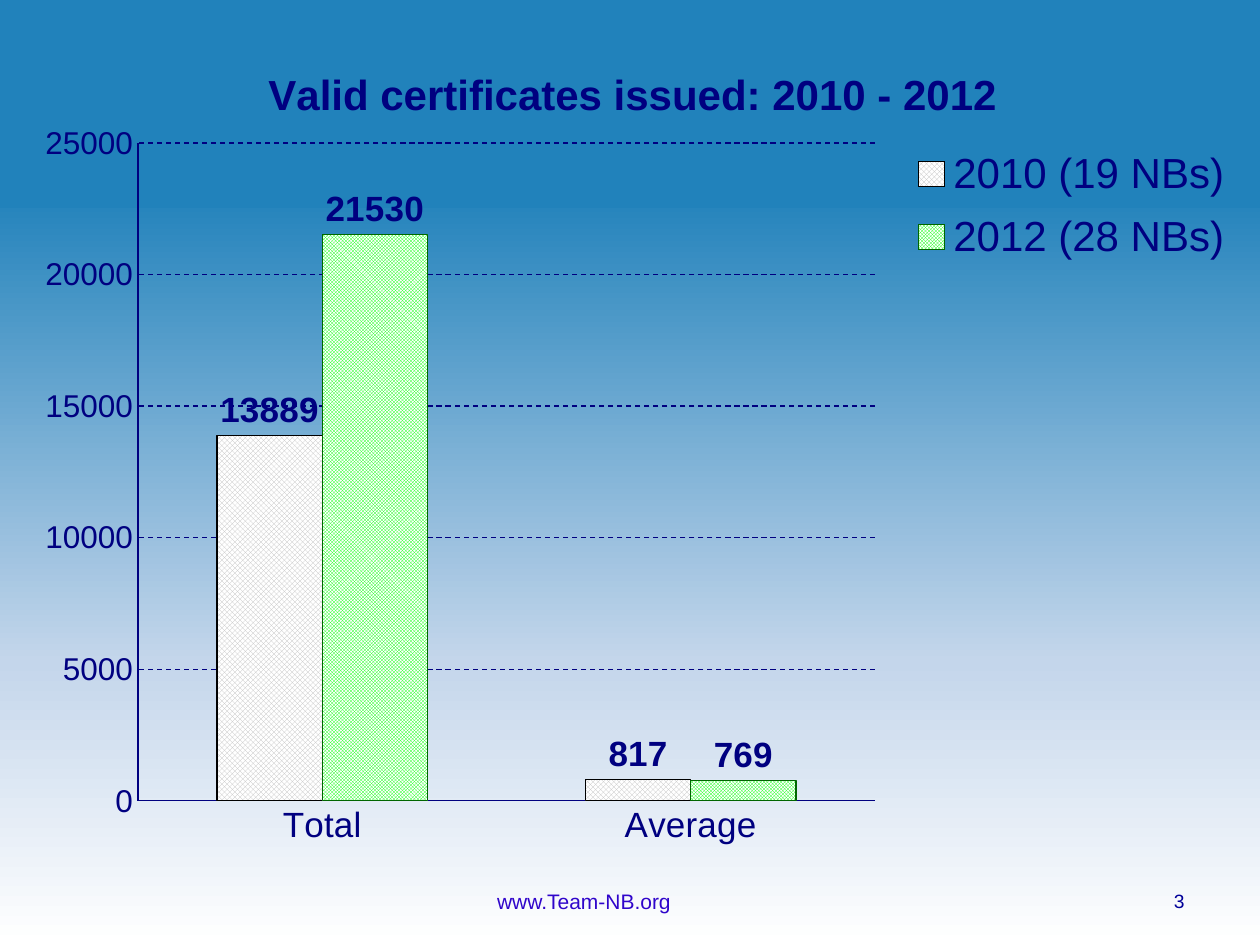
from lxml import etree
from pptx import Presentation
from pptx import util as u
from pptx.chart.data import CategoryChartData
from pptx.dml.color import RGBColor
from pptx.enum import chart as ch, dml, shapes, text
from pptx.oxml import parse_xml
from pptx.oxml.ns import nsdecls, qn

NAVY = "000080"
CATS = ["Total", "Average"]
SERIES = [
    ("2010 (19 NBs)", (13889, 817), dml.MSO_PATTERN.TRELLIS, "BFBFBF", "000000"),
    ("2012 (28 NBs)", (21530, 769), dml.MSO_PATTERN.SMALL_CHECKER_BOARD, "00FF00", "006600"),
]


def tint(color, code):
    color.rgb = RGBColor.from_string(code)


def apply(obj, form):
    for key, val in form.items():
        setattr(obj, key, val)


def style(font, size, code, bold=False):
    apply(font, {"name": "Arial", "size": u.Pt(size), "bold": bold})
    tint(font.color, code)


def stroke(line, code, width=0.75):
    line.width = u.Pt(width)
    tint(line.color, code)


def place(node, spot, frac, inner=False):
    for old in node.findall(qn("c:layout")):
        node.remove(old)
    rows = '<c:layoutTarget val="inner"/>' if inner else ""
    rows += '<c:xMode val="edge"/><c:yMode val="edge"/>'
    rows += "".join(f'<c:{k} val="{v}"/>' for k, v in zip("xywh", frac))
    node.insert(spot, parse_xml(
        f'<c:layout {nsdecls("c")}><c:manualLayout>{rows}</c:manualLayout></c:layout>'))


def backdrop(slide):
    fill = slide.background.fill
    fill.gradient()
    fill.gradient_angle = 270
    stops = next(slide.element.iter(qn("a:gsLst")))
    for old in list(stops):
        stops.remove(old)
    for pos, code in ((20, "2182BB"), (70, "C4D6EB"), (100, "FFFFFF")):
        stop = etree.SubElement(stops, qn("a:gs"), pos=str(pos * 1000))
        etree.SubElement(stop, qn("a:srgbClr"), val=code)


def band(slide, box):
    rect = slide.shapes.add_shape(shapes.MSO_SHAPE.RECTANGLE, *map(u.Inches, box))
    rect.shadow.inherit = False
    rect.fill.solid()
    tint(rect.fill.fore_color, "2182BB")
    stroke(rect.line, "2182BB", 2)


def note(slide, box, words, size, code, align):
    frame = slide.shapes.add_textbox(*map(u.Inches, box)).text_frame
    apply(frame, {"word_wrap": True, "vertical_anchor": text.MSO_ANCHOR.MIDDLE})
    para = frame.paragraphs[0]
    apply(para, {"text": words, "alignment": align})
    style(para.font, size, code)


def axes(chart):
    for axis, size in ((chart.category_axis, 20), (chart.value_axis, 18)):
        apply(axis, {"major_tick_mark": ch.XL_TICK_MARK.NONE,
                     "minor_tick_mark": ch.XL_TICK_MARK.NONE})
        style(axis.tick_labels.font, size, NAVY)
        stroke(axis.format.line, NAVY)
    apply(chart.value_axis, {"minimum_scale": 0, "maximum_scale": 25000,
                             "major_unit": 5000, "has_major_gridlines": True})
    grid = chart.value_axis.major_gridlines.format.line
    stroke(grid, NAVY)
    grid.dash_style = dml.MSO_LINE.DASH


def bars(chart):
    plot = chart.plots[0]
    apply(plot, {"gap_width": 150, "overlap": 0, "vary_by_categories": False})
    for bar, (_, _, mesh, ink, edge) in zip(plot.series, SERIES):
        fill = bar.format.fill
        fill.patterned()
        fill.pattern = mesh
        tint(fill.fore_color, ink)
        tint(fill.back_color, "FFFFFF")
        stroke(bar.format.line, edge)
        tags = bar.data_labels
        apply(tags, {"show_value": True, "number_format": "0",
                     "number_format_is_linked": False,
                     "position": ch.XL_LABEL_POSITION.OUTSIDE_END})
        style(tags.font, 20, NAVY, True)


def graph(slide, box):
    data = CategoryChartData()
    data.categories = CATS
    for name, vals, *_ in SERIES:
        data.add_series(name, vals)
    chart = slide.shapes.add_chart(
        ch.XL_CHART_TYPE.COLUMN_CLUSTERED, *map(u.Inches, box), data).chart
    style(chart.font, 10, "000000")
    apply(chart, {"has_title": True, "has_legend": True})
    para = chart.chart_title.text_frame.paragraphs[0]
    run = para.add_run()
    run.text = "Valid certificates issued: 2010 - 2012"
    style(run.font, 24, NAVY, True)
    apply(chart.legend, {"position": ch.XL_LEGEND_POSITION.RIGHT,
                         "include_in_layout": False})
    style(chart.legend.font, 24, NAVY)
    axes(chart)
    bars(chart)
    root = chart.element.find(qn("c:chart"))
    place(root.find(qn("c:title")), 1, (0.2, 0.04))
    place(root.find(qn("c:plotArea")), 0, (0.1, 0.14, 0.6, 0.79), True)
    place(root.find(qn("c:legend")), 1, (0.72, 0.13, 0.28, 0.17))


def main():
    deck = Presentation()
    apply(deck, {"slide_width": u.Inches(10), "slide_height": u.Inches(7.5)})
    slide = deck.slides.add_slide(deck.slide_layouts[6])
    backdrop(slide)
    band(slide, (0, 0, 10, 1.64))
    note(slide, (7.17, 6.95, 2.33, 0.4), "3", 11, "000099", text.PP_ALIGN.RIGHT)
    note(slide, (3.05, 6.95, 3.17, 0.4), "www.Team-NB.org", 12, "2F05CB",
         text.PP_ALIGN.CENTER)
    graph(slide, (0.12, 0.21, 9.75, 6.61))
    deck.save("out.pptx")


if __name__ == "__main__":
    main()
